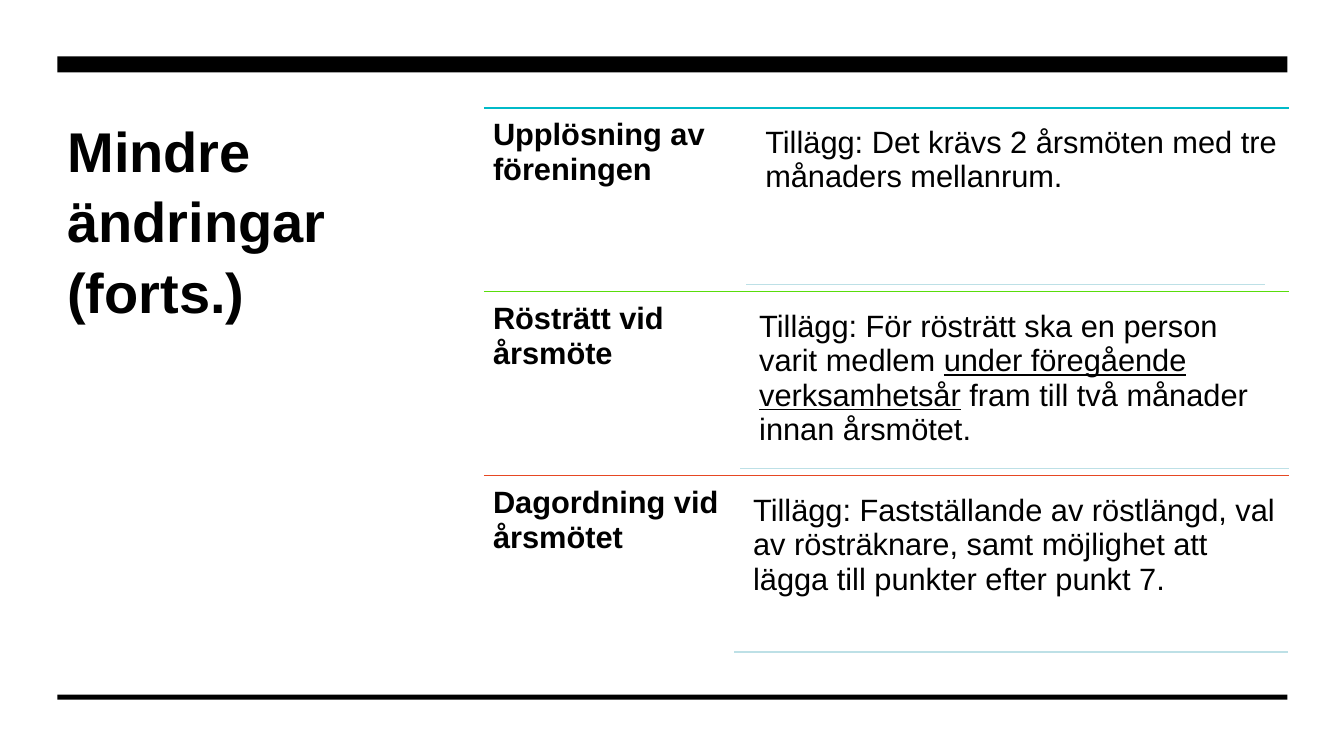
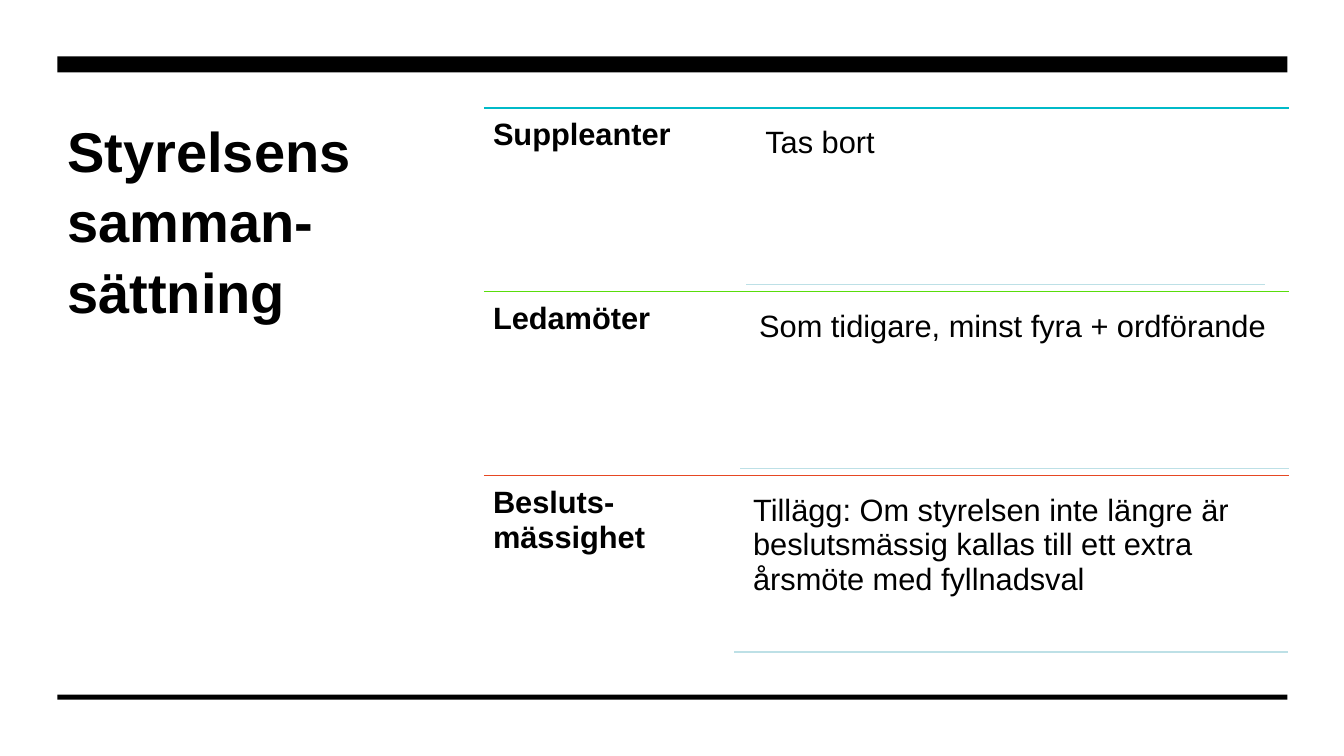
from lxml import etree
from pptx import Presentation
from pptx.dml.color import RGBColor
from pptx.enum import shapes, text
from pptx.oxml.ns import qn
from pptx.util import Inches, Pt

# Shared style
FONT = "Arial"
BLACK = RGBColor(0x00, 0x00, 0x00)
PALE = RGBColor(0xBD, 0xE0, 0xE6)
ROW_COLORS = (
    RGBColor(0x00, 0xBA, 0xC8),
    RGBColor(0x59, 0xDD, 0x0C),
    RGBColor(0xE6, 0x48, 0x23),
)

# Shared layout, in inches
MARGIN, BAND_WIDTH = 0.57, 12.2
ROWS_LEFT, ROWS_RIGHT = 4.8, 12.78
ROWS_TOP, ROW_HEIGHT = 1.07, 1.825
DETAIL_HEIGHT, DETAIL_OFFSET = 1.66, 0.09
STEP_LEFT = 0.06  # each row's detail starts a little further left
PALE_ENDS = (12.55, 12.78, 12.77)

# Content: title, then (label, detail runs); every second run is underlined
SLIDES = (
    ("Mindre ändringar (forts.)", (
        ("Upplösning av föreningen",
         ("Tillägg: Det krävs 2 årsmöten med tre månaders mellanrum.",)),
        ("Rösträtt vid årsmöte",
         ("Tillägg: För rösträtt ska en person varit medlem ",
          "under föregående verksamhetsår",
          " fram till två månader innan årsmötet.")),
        ("Dagordning vid årsmötet",
         ("Tillägg: Fastställande av röstlängd, val av rösträknare, samt "
          "möjlighet att lägga till punkter efter punkt 7.",)),
    )),
    ("Styrelsens samman-sättning", (
        ("Suppleanter", ("Tas bort",)),
        ("Ledamöter", ("Som tidigare, minst fyra + ordförande",)),
        ("Besluts-mässighet",
         ("Tillägg: Om styrelsen inte längre är beslutsmässig kallas till "
          "ett extra årsmöte med fyllnadsval",)),
    )),
)


def add_text(slide, box, runs, size, spacing, bold=False, insets=(0.09, 0.09)):
    frame = slide.shapes.add_textbox(*map(Inches, box)).text_frame
    frame.word_wrap = True
    frame.vertical_anchor = text.MSO_ANCHOR.TOP
    frame.margin_left = frame.margin_right = Inches(insets[0])
    frame.margin_top = frame.margin_bottom = Inches(insets[1])
    paragraph = frame.paragraphs[0]
    paragraph.line_spacing = spacing
    for index, words in enumerate(runs):
        run = paragraph.add_run()
        run.text = words
        run.font.name = FONT
        run.font.size = Pt(size)
        run.font.bold = bold
        run.font.color.rgb = BLACK
        if index % 2:
            run.font.underline = True


def add_band(slide, top, height):
    band = slide.shapes.add_shape(
        shapes.MSO_SHAPE.RECTANGLE,
        *map(Inches, (MARGIN, top, BAND_WIDTH, height)))
    band.shadow.inherit = False
    band.fill.solid()
    band.fill.fore_color.rgb = BLACK
    band.line.fill.background()


def add_rule(slide, left, right, y, color):
    rule = slide.shapes.add_connector(
        shapes.MSO_CONNECTOR.STRAIGHT, *map(Inches, (left, y, right, y)))
    rule.line.color.rgb = color
    rule.line.width = Pt(1)
    etree.SubElement(rule._element.spPr, qn("a:effectLst"))


def add_row(slide, index, label, detail):
    top = ROWS_TOP + index * ROW_HEIGHT
    detail_left = 7.5 - index * STEP_LEFT
    detail_top = top + DETAIL_OFFSET
    rule_left = detail_left - 0.1
    add_rule(slide, ROWS_LEFT, ROWS_RIGHT, top, ROW_COLORS[index])
    add_text(slide, (ROWS_LEFT, top, rule_left - ROWS_LEFT, ROW_HEIGHT),
             (label,), 22, 0.96, bold=True)
    add_text(slide,
             (detail_left, detail_top, ROWS_RIGHT - detail_left, DETAIL_HEIGHT),
             detail, 22, 0.93)
    add_rule(slide, rule_left, PALE_ENDS[index],
             detail_top + DETAIL_HEIGHT, PALE)


def add_slide(deck, title, rows):
    slide = deck.slides.add_slide(deck.slide_layouts[6])
    # Title and bands
    add_text(slide, (MARGIN, ROWS_TOP, 3.45, 4.45), (title,), 40, 1.05,
             bold=True, insets=(0.1, 0.05))
    add_band(slide, 0.56, 0.16)
    add_band(slide, 6.89, 0.05)
    # Changes
    for index, (label, detail) in enumerate(rows):
        add_row(slide, index, label, detail)


def main():
    deck = Presentation()
    deck.slide_width, deck.slide_height = Inches(13.33), Inches(7.5)
    for title, rows in SLIDES:
        add_slide(deck, title, rows)
    deck.save("out.pptx")


if __name__ == "__main__":
    main()
